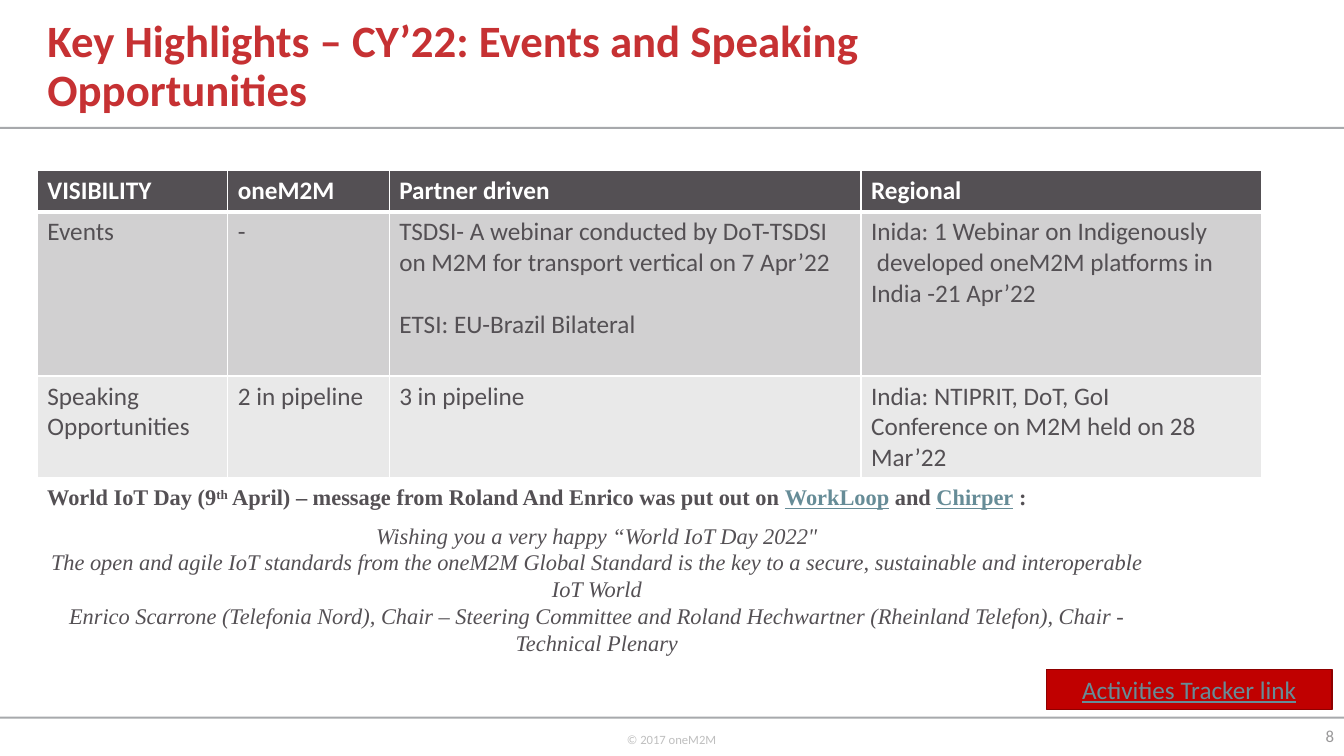
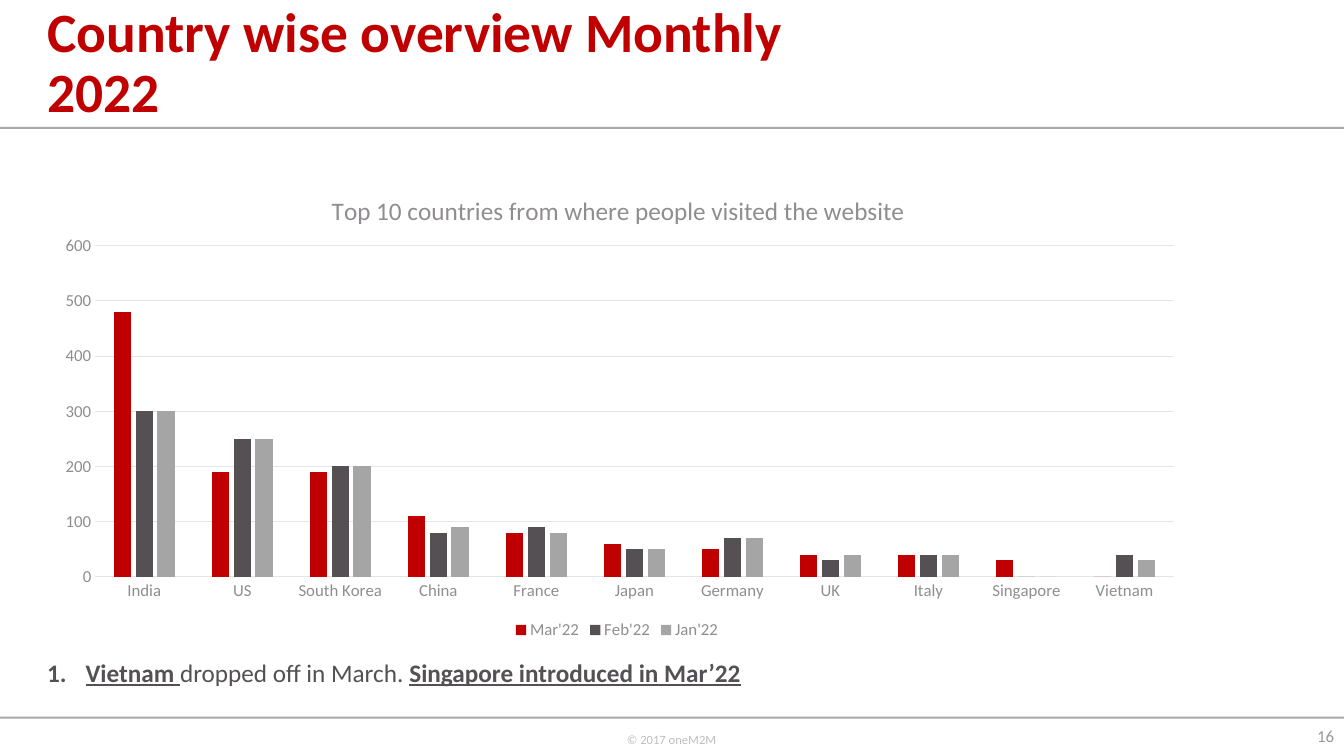
from lxml.etree import SubElement
from pptx import Presentation
from pptx.chart.data import CategoryChartData
from pptx.dml.color import RGBColor
from pptx.enum.chart import XL_CHART_TYPE, XL_LEGEND_POSITION, XL_TICK_MARK
from pptx.enum.shapes import MSO_SHAPE
from pptx.enum.text import MSO_ANCHOR, MSO_AUTO_SIZE, PP_ALIGN
from pptx.oxml import parse_xml
from pptx.oxml.ns import nsdecls, qn
from pptx.util import Pt

PX = 9144
SLIDE_W, SLIDE_H = 1333, 750
SANS, SERIF = "Calibri", "Times New Roman"

WHITE = RGBColor(0xFF, 0xFF, 0xFF)
RULE = RGBColor(0xA7, 0xA9, 0xAC)
FOOTER = RGBColor(0xBF, 0xBF, 0xBF)
NUMBER = RGBColor(0x99, 0x98, 0x99)
CORAL = RGBColor(0xC6, 0x31, 0x33)
RED = RGBColor(0xC0, 0x00, 0x00)
DARK_RED = RGBColor(0x8E, 0x00, 0x00)
INK = RGBColor(0x54, 0x50, 0x54)
LINK = RGBColor(0x66, 0x8C, 0x97)
BAND_DARK = RGBColor(0xD1, 0xD0, 0xD1)
BAND_LIGHT = RGBColor(0xE9, 0xE9, 0xE9)
AXIS = RGBColor(0x91, 0x8C, 0x91)
GRID = RGBColor(0xE6, 0xE4, 0xE6)
SILVER = RGBColor(0xA5, 0xA5, 0xA5)

LINKED = {"color": LINK, "underline": True}


def emu(box):
    return [length * PX for length in box]


def style_font(font, size, color, name=SANS, bold=False):
    font.size, font.name, font.bold = Pt(size), name, bold
    font.color.rgb = color


def add_run(paragraph, text, size, color=INK, name=SANS, bold=False,
            italic=False, underline=False, raised=False):
    run = paragraph.add_run()
    run.text = text
    style_font(run.font, size, color, name, bold)
    run.font.italic, run.font.underline = italic, underline
    if raised:
        run.font._element.set("baseline", "30000")


def add_text(slide, box, wrap=True, anchor=MSO_ANCHOR.TOP):
    frame = slide.shapes.add_textbox(*emu(box)).text_frame
    frame.word_wrap, frame.vertical_anchor = wrap, anchor
    return frame


def add_bar(slide, box, fill, outline=None):
    bar = slide.shapes.add_shape(MSO_SHAPE.RECTANGLE, *emu(box))
    bar.shadow.inherit = False
    bar.fill.solid()
    bar.fill.fore_color.rgb = fill
    if outline is None:
        bar.line.fill.background()
    else:
        bar.line.color.rgb, bar.line.width = outline, Pt(1)
    return bar


def add_page(deck, heading, box, size, color, number):
    slide = deck.slides.add_slide(deck.slide_layouts[5])
    for top in (126, 711):
        add_bar(slide, (0, top, SLIDE_W, 2), RULE)
    copyright_line = add_text(slide, (612, 721, 110, 40), wrap=False)
    add_run(copyright_line.paragraphs[0], "© 2017 oneM2M", 9, FOOTER)

    title = slide.shapes.title
    title.left, title.top, title.width, title.height = emu(box)
    frame = title.text_frame
    frame.word_wrap, frame.auto_size = True, MSO_AUTO_SIZE.NONE
    frame.vertical_anchor = MSO_ANCHOR.MIDDLE
    paragraph = frame.paragraphs[0]
    paragraph.alignment, paragraph.line_spacing = PP_ALIGN.LEFT, 0.9
    add_run(paragraph, heading, size, color, bold=True)

    page_number = add_text(slide, (1279, 710, 54, 40), anchor=MSO_ANCHOR.MIDDLE)
    page_number.paragraphs[0].alignment = PP_ALIGN.RIGHT
    add_run(page_number.paragraphs[0], str(number), 12, NUMBER)
    return slide


def border_cell(cell, bottom):
    props = cell._tc.get_or_add_tcPr()
    for position, (side, width) in enumerate(
            (("L", 1), ("R", 1), ("T", 1), ("B", bottom))):
        props.insert(position, parse_xml(
            f'<a:ln{side} {nsdecls("a")} w="{Pt(width)}"><a:solidFill>'
            f'<a:srgbClr val="{WHITE}"/></a:solidFill></a:ln{side}>'))


def add_visibility_table(slide, left, top):
    rows = (
        ("VISIBILITY", "oneM2M", "Partner driven", "Regional"),
        ("Events", "-",
         "TSDSI- A webinar conducted by DoT-TSDSI on M2M for transport vertical "
         "on 7 Apr’22\nETSI: EU-Brazil Bilateral",
         "Inida: 1 Webinar on Indigenously\n"
         " developed oneM2M platforms in India -21 Apr’22"),
        ("Speaking Opportunities", "2 in pipeline", "3 in pipeline",
         "India: NTIPRIT, DoT, GoI\nConference on M2M held on 28 Mar’22"),
    )
    widths, heights = (189, 160, 468, 397), (41, 163, 101)
    fills = (INK, BAND_DARK, BAND_LIGHT)
    table = slide.shapes.add_table(
        len(rows), len(widths),
        *emu((left, top, sum(widths), sum(heights)))).table
    table.horz_banding = False
    for column, width in zip(table.columns, widths):
        column.width = width * PX
    for r, (texts, height, fill) in enumerate(zip(rows, heights, fills)):
        table.rows[r].height = height * PX
        header = r == 0
        for c, text in enumerate(texts):
            cell = table.cell(r, c)
            cell.fill.solid()
            cell.fill.fore_color.rgb = fill
            border_cell(cell, 3 if header else 1)
            for i, line in enumerate(text.split("\n")):
                frame = cell.text_frame
                paragraph = frame.add_paragraph() if i else frame.paragraphs[0]
                add_run(paragraph, line, 18, WHITE if header else INK, bold=header)
    table.cell(1, 2).text_frame.paragraphs[1].space_before = Pt(22)


def add_iot_day_message(slide, box):
    frame = add_text(slide, box)
    lead = frame.paragraphs[0]
    lead.line_spacing, lead.space_after = 1.07, Pt(8)
    for text, style in (
            ("World IoT Day (9", {}),
            ("th", {"raised": True}),
            (" April) – message from Roland And Enrico was put out on ", {}),
            ("WorkLoop", LINKED),
            (" and ", {}),
            ("Chirper", LINKED),
            (" :", {})):
        add_run(lead, text, 16, name=SERIF, bold=True, **style)
    for line in (
            "Wishing you a very happy “World IoT Day 2022\"",
            "The open and agile IoT standards from the oneM2M Global Standard is "
            "the key to a secure, sustainable and interoperable IoT World",
            "Enrico Scarrone (Telefonia Nord), Chair – Steering Committee and "
            "Roland Hechwartner (Rheinland Telefon), Chair - Technical Plenary"):
        paragraph = frame.add_paragraph()
        paragraph.alignment = PP_ALIGN.CENTER
        add_run(paragraph, line, 16, name=SERIF, italic=True)


def add_tracker_button(slide, box):
    frame = add_bar(slide, box, RED, DARK_RED).text_frame
    frame.vertical_anchor = MSO_ANCHOR.MIDDLE
    frame.paragraphs[0].alignment = PP_ALIGN.CENTER
    add_run(frame.paragraphs[0], "Activities Tracker link", 18, **LINKED)


def manual_layout(**values):
    items = "".join(f'<c:{key} val="{value}"/>' for key, value in values.items())
    return parse_xml(f'<c:layout {nsdecls("c")}><c:manualLayout>{items}'
                     "</c:manualLayout></c:layout>")


def set_layout(element, layout, after=None):
    for old in element.findall(qn("c:layout")):
        element.remove(old)
    if after is None:
        element.insert(0, layout)
    else:
        element.find(qn(after)).addnext(layout)


def add_country_chart(slide, box):
    data = CategoryChartData()
    data.categories = ("India", "US", "South Korea", "China", "France", "Japan",
                       "Germany", "UK", "Italy", "Singapore", "Vietnam")
    months = (
        ("Mar'22", RED, (480, 190, 190, 110, 80, 60, 50, 40, 40, 30, 0)),
        ("Feb'22", INK, (300, 250, 200, 80, 90, 50, 70, 30, 40, 0, 40)),
        ("Jan'22", SILVER, (300, 250, 200, 90, 80, 50, 70, 40, 40, 0, 30)),
    )
    for month, _, visits in months:
        data.add_series(month, visits)
    chart = slide.shapes.add_chart(
        XL_CHART_TYPE.COLUMN_CLUSTERED, *emu(box), data).chart
    style_font(chart.font, 12, AXIS)

    chart.has_title = True
    heading = chart.chart_title
    add_run(heading.text_frame.paragraphs[0],
            "Top 10 countries from where people visited the website", 18, AXIS)
    heading.include_in_layout = False
    set_layout(heading._element,
               manual_layout(xMode="edge", yMode="edge", x=0.25, y=0.05), "c:tx")
    set_layout(chart._chartSpace.chart.plotArea,
               manual_layout(layoutTarget="inner", xMode="edge", yMode="edge",
                             x=0.05, y=0.17, w=0.93, h=0.69))

    chart.has_legend = True
    chart.legend.position = XL_LEGEND_POSITION.BOTTOM
    chart.legend.include_in_layout = False
    style_font(chart.legend.font, 12, AXIS)

    plot = chart.plots[0]
    plot.gap_width, plot.overlap, plot.vary_by_categories = 219, -27, False
    for series, (_, color, _) in zip(plot.series, months):
        series.format.fill.solid()
        series.format.fill.fore_color.rgb = color

    countries, visits = chart.category_axis, chart.value_axis
    for axis in (countries, visits):
        axis.major_tick_mark = axis.minor_tick_mark = XL_TICK_MARK.NONE
        style_font(axis.tick_labels.font, 12, AXIS)
    visits.minimum_scale, visits.maximum_scale, visits.major_unit = 0, 600, 100
    visits.format.line.fill.background()
    for line in (countries.format.line, visits.major_gridlines.format.line):
        line.color.rgb, line.width = GRID, Pt(0.75)


def add_country_note(slide, box):
    note = add_text(slide, box).paragraphs[0]
    props = note._p.get_or_add_pPr()
    props.set("marL", str(38 * PX))
    props.set("indent", str(-38 * PX))
    SubElement(props, qn("a:buFont")).set("typeface", "+mj-lt")
    SubElement(props, qn("a:buAutoNum")).set("type", "arabicPeriod")
    for text, strong in (("Vietnam ", True), ("dropped off in March. ", False),
                         ("Singapore introduced in Mar’22", True)):
        add_run(note, text, 18, bold=strong, underline=strong)


def build_events_slide(deck):
    slide = add_page(deck, "Key Highlights – CY’22: Events and Speaking Opportunities",
                     (37, 3, 983, 128), 32, CORAL, 8)
    add_visibility_table(slide, 37, 169)
    add_tracker_button(slide, (1038, 664, 283, 40))
    add_iot_day_message(slide, (37, 473, 1110, 212))


def build_countries_slide(deck):
    slide = add_page(deck, "Country wise overview Monthly 2022",
                     (37, 0, 859, 128), 39.6, RED, 16)
    add_country_chart(slide, (37, 163, 1150, 476))
    add_country_note(slide, (37, 647, 1051, 40))


def main():
    deck = Presentation()
    deck.slide_width, deck.slide_height = emu((SLIDE_W, SLIDE_H))
    build_events_slide(deck)
    build_countries_slide(deck)
    deck.save("out.pptx")


if __name__ == "__main__":
    main()
